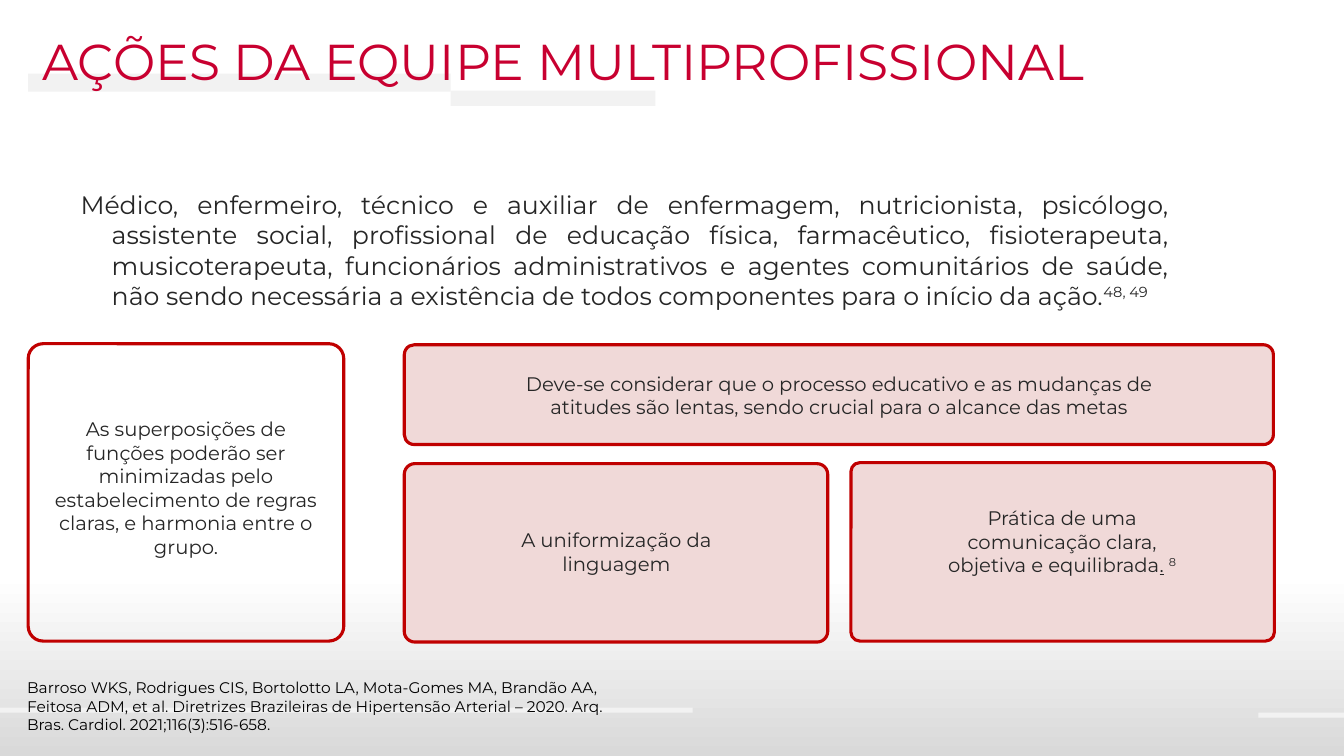
"""Builds the slide on the actions of the multiprofessional team."""
from pptx import Presentation
from pptx.dml.color import RGBColor
from pptx.enum.shapes import MSO_SHAPE as SHAPE
from pptx.enum.text import PP_ALIGN as ALIGN
from pptx.util import Inches, Pt


def rgb(color):
    """Turn a hex string into a colour."""
    return RGBColor.from_string(color)


def add_run(p, text, size=14, color="262626", font="Montserrat", underline=None, base=None):
    """Add one formatted run to a paragraph."""
    r = p.add_run()
    r.text = text
    r.font.size, r.font.name = Pt(size), font
    r.font.color.rgb = rgb(color)
    r.font.underline = underline
    if base:
        r.font._element.set("baseline", str(base * 1000))


class Slide:
    """Holds the style and the current slide."""

    red, pink, gray = "C00000", "F0D9D8", "F2F2F2"

    def __init__(self, prs):
        """Add a blank slide."""
        self.s = prs.slides.add_slide(prs.slide_layouts[6])

    def shape(self, kind, box):
        """Add a preset shape without shadow or line."""
        sp = self.s.shapes.add_shape(kind, *map(Inches, box))
        sp.shadow.inherit = False
        sp.line.fill.background()
        return sp

    def backdrop(self, width, height):
        """Fade the slide from white to gray at the bottom."""
        fill = self.shape(SHAPE.RECTANGLE, (0, 0, width, height)).fill
        fill.gradient()
        fill.gradient_angle = 270
        for stop, (position, color) in zip(fill.gradient_stops, [(0.76, "FFFFFF"), (1, "D9D9D9")]):
            stop.position, stop.color.rgb = position, rgb(color)

    def stripe(self, *box):
        """Add a light gray bar."""
        fill = self.shape(SHAPE.RECTANGLE, box).fill
        fill.solid()
        fill.fore_color.rgb = rgb(self.gray)

    def card(self, box, radius, color=None):
        """Add a rounded frame with a red outline."""
        sp = self.shape(SHAPE.ROUNDED_RECTANGLE, box)
        sp.adjustments[0] = radius
        sp.line.color.rgb, sp.line.width = rgb(self.red), Pt(2.25)
        if color:
            sp.fill.solid()
            sp.fill.fore_color.rgb = rgb(color)
        else:
            sp.fill.background()

    def text(self, box, *paragraphs, align=ALIGN.CENTER, hanging=0, **style):
        """Add a text box; each paragraph is a list of (text, format) runs."""
        tf = self.s.shapes.add_textbox(*map(Inches, box)).text_frame
        tf.word_wrap = True
        for i, runs in enumerate(paragraphs):
            p = tf.add_paragraph() if i else tf.paragraphs[0]
            p.alignment = align
            if hanging:
                pPr = p._p.get_or_add_pPr()
                pPr.set("marL", str(Inches(hanging)))
                pPr.set("indent", str(-Inches(hanging)))
            for text, extra in runs:
                add_run(p, text, **style, **extra)


def main():
    """Build and save the slide."""
    prs = Presentation()
    prs.slide_width, prs.slide_height = Inches(13.33), Inches(7.5)
    s = Slide(prs)

    s.backdrop(13.33, 7.5)
    s.stripe(0.28, 0.73, 4.19, 0.18)
    s.stripe(4.47, 0.9, 2.03, 0.15)
    s.stripe(0, 7.02, 6.87, 0.05)
    s.stripe(12.48, 7.07, 0.85, 0.05)

    s.card((4.01, 4.6, 4.2, 1.77), 0.06, s.pink)
    s.card((4.01, 3.42, 8.62, 0.99), 0.1, s.pink)
    s.card((8.44, 4.59, 4.2, 1.77), 0.05, s.pink)
    s.card((0.28, 3.41, 3.13, 2.95), 0.05)

    s.text((0.32, 0.25, 12.05, 0.71), [("AÇÕES DA EQUIPE MULTIPROFISSIONAL", {})],
           align=ALIGN.LEFT, size=36, color="C80030")
    s.text((0.7, 1.83, 10.99, 1.95),
           [("Médico, enfermeiro, técnico e auxiliar de enfermagem, nutricionista, psicólogo, "
             "assistente social, profissional de educação física, farmacêutico, fisioterapeuta, "
             "musicoterapeuta, funcionários administrativos e agentes comunitários de saúde, "
             "não sendo necessária a existência de todos componentes para o início da ação.", {}),
            ("48, 49", {"base": 30})],
           align=ALIGN.JUSTIFY, hanging=0.31, size=18)
    s.text((0.44, 4.09, 2.81, 1.75),
           [("As superposições de funções poderão ser minimizadas pelo "
             "estabelecimento de regras claras, e harmonia entre o grupo.", {})])
    s.text((4.45, 3.64, 7.75, 0.57),
           [("Deve-se considerar que o processo educativo e as mudanças de", {})],
           [("atitudes são lentas, sendo crucial para o alcance das metas", {})])
    s.text((4.9, 5.19, 2.43, 0.57), [("A uniformização da linguagem", {})])
    s.text((9.29, 4.97, 2.49, 1.04),
           [("Prática de uma comunicação clara, objetiva e equilibrada", {}),
            (".", {"underline": True}), (" ", {}), ("8", {"base": 30})])
    s.text((0.17, 6.68, 6.05, 0.66),
           [("Barroso WKS, Rodrigues CIS, Bortolotto LA, Mota-Gomes MA, Brandão AA, "
             "Feitosa ADM, et al. Diretrizes Brazileiras de Hipertensão Arterial – 2020. "
             "Arq. Bras. Cardiol. 2021;116(3):516-658.", {})],
           align=ALIGN.LEFT, size=11, color="000000")

    prs.save("out.pptx")


if __name__ == "__main__":
    main()
